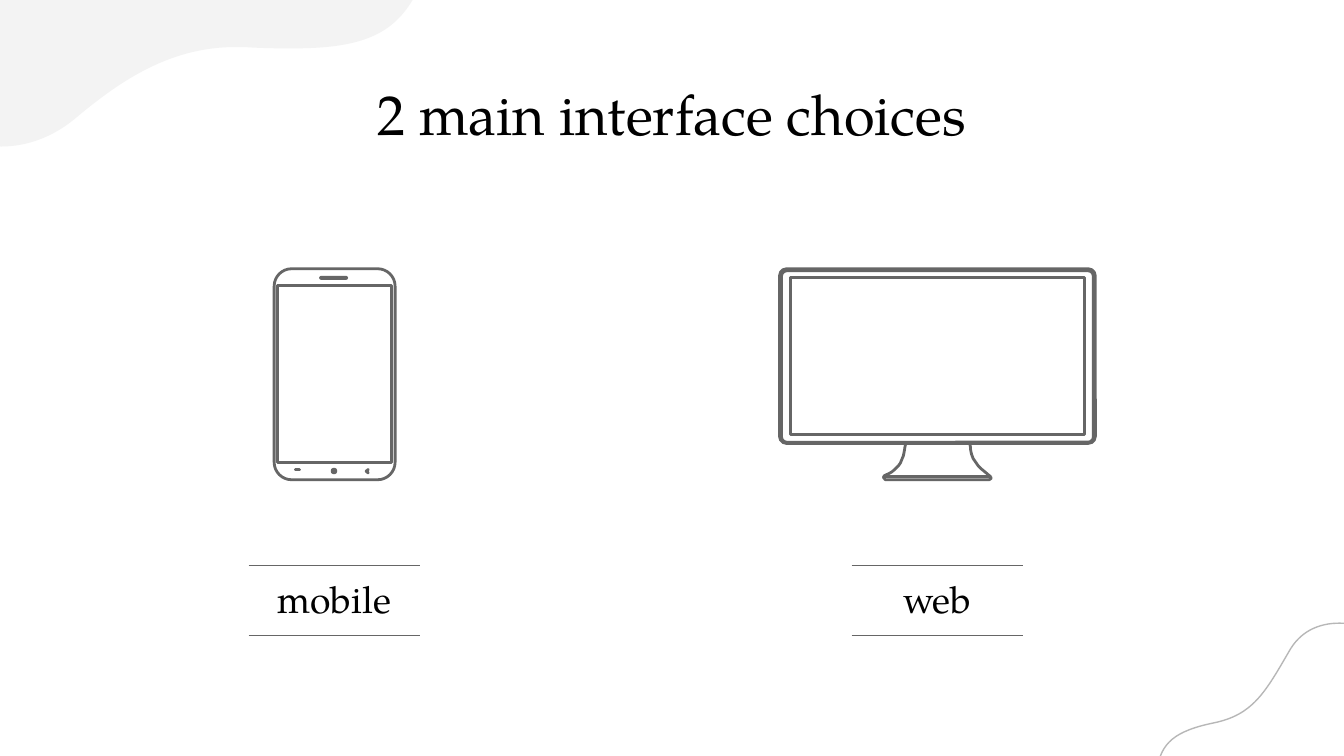
from lxml import etree
from pptx import Presentation
from pptx import util as u
from pptx.dml.color import RGBColor
from pptx.enum import shapes, text
from pptx.oxml.ns import qn

COLORS = {"ink": "000000", "icon": "666666", "blob": "F3F3F3", "wave": "B7B7B7"}
FONT = "TeX Gyre Pagella"
COLUMNS = 100  # square grid cells, a hundred across the slide


def box(left, top, right, bottom):
    return [(left, top), (right, top), (right, bottom), (left, bottom)]


def rounded_box(left, top, right, bottom, radius):
    k = radius * 0.45  # distance from corner to control point
    return [
        (left + radius, top), (right - radius, top),
        (right - k, top, right, top + k, right, top + radius), (right, bottom - radius),
        (right, bottom - k, right - k, bottom, right - radius, bottom), (left + radius, bottom),
        (left + k, bottom, left, bottom - k, left, bottom - radius), (left, top + radius),
        (left, top + k, left + k, top, left + radius, top),
    ]


def bend(shape, segments):
    """Make a cubic curve of each line whose segment has control points."""
    lines = list(shape._element.iter(qn("a:lnTo")))
    for line, segment in zip(lines, segments):
        if len(segment) == 2:
            continue
        curve = etree.Element(qn("a:cubicBezTo"))
        for x, y in zip(segment[::2], segment[1::2]):
            etree.SubElement(curve, qn("a:pt"), x=str(x - shape.left), y=str(y - shape.top))
        line.getparent().replace(line, curve)


def write(shape, content, size, anchor=text.MSO_ANCHOR.TOP, inset_top=0):
    frame = shape.text_frame
    frame.word_wrap = True
    frame.vertical_anchor = anchor
    frame.margin_left = frame.margin_right = frame.margin_bottom = 0
    frame.margin_top = u.Inches(inset_top)
    paragraph = frame.paragraphs[0]
    paragraph.alignment = text.PP_ALIGN.CENTER
    run = paragraph.add_run()
    run.text = content
    run.font.name = FONT
    run.font.size = u.Pt(size)
    run.font.color.rgb = RGBColor.from_string(COLORS["ink"])


class Sketch:
    """Draws on one slide; every length is in grid cells."""

    def __init__(self, presentation):
        self.slide = presentation.slides.add_slide(presentation.slide_layouts[6])
        self.shapes = self.slide.shapes
        self.cell = presentation.slide_width / COLUMNS

    def start_group(self):
        """Put all that is drawn from here on into one group."""
        self.shapes = self.slide.shapes.add_group_shape().shapes

    def cells(self, *values):
        return [round(value * self.cell) for value in values]

    def style(self, shape, fill=None, line=None, width=1.5):
        shape.shadow.inherit = False
        if fill:
            shape.fill.solid()
            shape.fill.fore_color.rgb = RGBColor.from_string(COLORS[fill])
        else:
            shape.fill.background()
        if line:
            shape.line.color.rgb = RGBColor.from_string(COLORS[line])
            shape.line.width = u.Pt(width)
        else:
            shape.line.fill.background()

    def label(self, content, area, size, **options):
        write(self.shapes.add_textbox(*self.cells(*area)), content, size, **options)

    def rule(self, left, right, y, width=0.75):
        connector = self.shapes.add_connector(
            shapes.MSO_CONNECTOR.STRAIGHT, *self.cells(left, y, right, y))
        connector.line.color.rgb = RGBColor.from_string(COLORS["icon"])
        connector.line.width = u.Pt(width)
        etree.SubElement(connector._element.spPr, qn("a:effectLst"))

    def frame(self, area, rounding=0):
        kind = shapes.MSO_SHAPE.ROUNDED_RECTANGLE if rounding else shapes.MSO_SHAPE.RECTANGLE
        shape = self.shapes.add_shape(kind, *self.cells(*area))
        if rounding:
            shape.adjustments[0] = rounding
        self.style(shape, line="icon")

    def outline(self, *contours, closed=True, **style):
        """Each contour is a start point, then lines (x, y) and curves (six numbers)."""
        builder = None
        segments = []
        for contour in contours:
            first, *rest = [self.cells(*segment) for segment in contour]
            if builder is None:
                builder = self.shapes.build_freeform(*first, scale=1.0)
            else:
                builder.move_to(*first)
            builder.add_line_segments([segment[-2:] for segment in rest], close=closed)
            segments += rest
        shape = builder.convert_to_shape()
        bend(shape, segments)
        self.style(shape, **style)


def draw_corners(sketch):
    sketch.outline([
        (30.7, 0), (29.1, 2.7, 26.6, 3.6, 21.8, 3.6), (20.8, 3.6, 19.6, 3.6, 18.2, 3.5),
        (18, 3.5, 17.7, 3.5, 17.5, 3.5), (12.4, 3.5, 8.6, 6.3, 5.5, 8.9),
        (3.9, 10.2, 2, 10.9, 0.1, 10.9), (-2.1, 10.9, -4.2, 9.9, -5.6, 8), (-5.6, 0),
    ], fill="blob")
    sketch.outline([
        (86.1, 57.2), (86.4, 55.3, 87.4, 54.4, 90.3, 53.8),
        (93.2, 53.2, 94.1, 51.6, 95.9, 48.5), (97.6, 45.4, 101.3, 46.6, 101.3, 46.6),
        (101.3, 57.2),
    ], line="wave", width=0.75)


def draw_phone(sketch):
    speaker = rounded_box(23.85, 20.63, 25.8, 20.73, 0.05)
    screen = box(20.65, 21.25, 29.15, 34.4)
    menu_button = box(22, 34.92, 22.3, 34.98)
    home_button = rounded_box(24.73, 34.93, 24.98, 35.17, 0.05)
    back_button = [(27.4, 34.93), (27.25, 35.07), (27.4, 35.2), (27.3, 35.07)]
    body = rounded_box(20.4, 20, 29.4, 35.7, 1.3)
    sketch.outline(speaker, screen, menu_button, home_button, back_button, body, line="icon")


def draw_monitor(sketch):
    sketch.start_group()
    sketch.frame((58.8, 20.65, 21.9, 11.7))
    sketch.frame((58, 20, 23.5, 13), rounding=0.04)
    sketch.frame((58.15, 20.15, 23.2, 12.75), rounding=0.03)
    sketch.outline([
        (67.4, 33), (67.3, 33.2, 67.3, 33.9, 67.1, 34.2), (67, 34.6, 66.7, 34.8, 66.5, 35),
        (66.3, 35.2, 66, 35.3, 65.8, 35.4), (65.7, 35.5, 65.7, 35.6, 65.8, 35.6),
        (65.8, 35.7, 65.8, 35.7, 66.2, 35.7), (66.5, 35.7, 67.1, 35.7, 67.7, 35.7),
        (68.3, 35.7, 69.2, 35.7, 70, 35.7), (70.8, 35.7, 71.9, 35.7, 72.5, 35.7),
        (73.1, 35.7, 73.4, 35.7, 73.6, 35.7), (73.8, 35.6, 73.8, 35.5, 73.7, 35.5),
        (73.7, 35.4, 73.7, 35.5, 73.5, 35.3), (73.3, 35.1, 72.8, 34.8, 72.6, 34.4),
        (72.3, 34.1, 72.2, 33.5, 72.2, 33.2), (72.1, 33, 72.2, 33.1, 72.2, 33.1),
    ], closed=False, line="icon")
    sketch.rule(65.8, 73.7, 35.45, width=1.5)


def main():
    presentation = Presentation()
    presentation.slide_width = u.Inches(10)
    presentation.slide_height = presentation.slide_width * 9 // 16
    sketch = Sketch(presentation)
    draw_corners(sketch)
    sketch.label("2 main interface choices", (7.85, 5.9, 84.3, 6.3), 30)
    label_width = 12.75
    for content, left in (("mobile", 18.5), ("web", 63.37)):
        sketch.label(content, (left, 42.65, label_width, 3.1), 20,
                     anchor=text.MSO_ANCHOR.MIDDLE, inset_top=0.07)
        for y in (42.1, 47.3):
            sketch.rule(left, left + label_width, y)
    draw_phone(sketch)
    draw_monitor(sketch)
    presentation.save("out.pptx")


if __name__ == "__main__":
    main()
